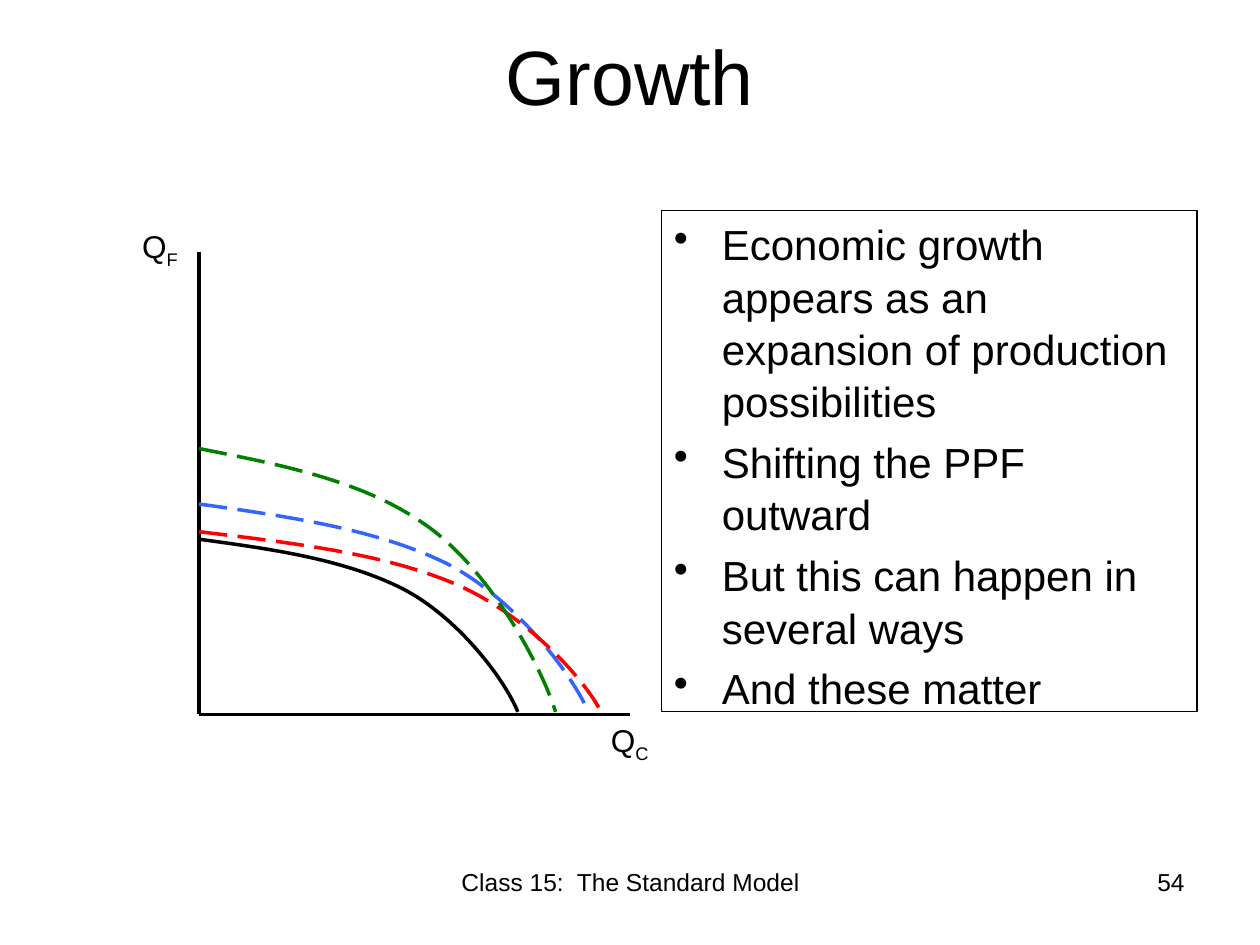
"""Build the Growth slide: a PPF diagram with shifted curves and a list of points."""
from pptx import Presentation, util as u
from pptx.dml.color import RGBColor
from pptx.enum import dml, shapes, text
from pptx.oxml import ns, xmlchemy as xml

HUES = {"ink": "000000", "blue": "3366FF", "red": "FF0000", "green": "008000"}
ALIGN = text.PP_ALIGN


def stroke(line, hue, width):
    line.color.rgb = RGBColor.from_string(HUES[hue])
    line.width = u.Pt(width)


def write(para, words, size, base=None):
    run = para.add_run()
    run.text = words
    run.font.size = u.Pt(size)
    run.font.name = "Arial"
    run.font.color.rgb = RGBColor.from_string(HUES["ink"])
    if base:
        run.font._element.set("baseline", base)


deck = Presentation()
deck.slide_width, deck.slide_height = u.Inches(10), u.Inches(7.5)
slide = deck.slides.add_slide(deck.slide_layouts[5])

title = slide.shapes.title
title.left, title.top = u.Inches(0.5), u.Inches(0.23)
title.width, title.height = u.Inches(9), u.Inches(1.25)
frame = title.text_frame
frame.vertical_anchor = text.MSO_ANCHOR.TOP
frame.margin_top = 0
frame.paragraphs[0].alignment = ALIGN.CENTER
write(frame.paragraphs[0], "Growth", 44)

left, base = 1.58, 5.67
for right, top in [(5, base), (left, 2)]:
    axis = slide.shapes.add_connector(
        shapes.MSO_CONNECTOR.STRAIGHT,
        u.Inches(left), u.Inches(base), u.Inches(right), u.Inches(top))
    stroke(axis.line, "ink", 2)
    axis._element.spPr.append(xml.OxmlElement("a:effectLst"))

curves = [
    ("ink", False, [(1.58, 4.28), (2.17, 4.36), (2.73, 4.44), (3.19, 4.67),
                    (3.64, 4.9), (4.01, 5.4), (4.11, 5.65)]),
    ("blue", True, [(1.58, 4), (2.29, 4.1), (2.99, 4.2), (3.54, 4.47),
                    (4.09, 4.75), (4.54, 5.35), (4.67, 5.65)]),
    ("red", True, [(1.58, 4.22), (2.32, 4.31), (3.03, 4.39), (3.6, 4.63),
                   (4.17, 4.87), (4.64, 5.39), (4.77, 5.65)]),
    ("green", True, [(1.58, 3.56), (2.23, 3.69), (2.87, 3.81), (3.37, 4.16),
                     (3.88, 4.51), (4.29, 5.27), (4.41, 5.65)]),
]
for hue, dashed, points in curves:
    start, *rest = [(u.Inches(x), u.Inches(y)) for x, y in points]
    pen = slide.shapes.build_freeform(*start)
    pen.add_line_segments(rest, close=False)
    curve = pen.convert_to_shape()
    curve.shadow.inherit = False
    curve.fill.background()
    stroke(curve.line, hue, 2)
    if dashed:
        curve.line.dash_style = dml.MSO_LINE.LONG_DASH
    route = next(curve._element.iter(ns.qn("a:path")))
    steps = route.findall(ns.qn("a:lnTo"))
    for first in (0, 3):
        bend = xml.OxmlElement("a:cubicBezTo")
        for step in steps[first:first + 3]:
            bend.append(step[0])
            route.remove(step)
        route.append(bend)

labels = [
    (4.75, 5.67, 0.75, 0.71, ALIGN.LEFT, [("Q", 18, None), ("C", 18, "-25000")]),
    (1.03, 1.75, 0.75, 0.71, ALIGN.LEFT, [("Q", 18, None), ("F", 18, "-25000")]),
    (3.42, 6.83, 3.17, 0.52, ALIGN.CENTER, [("Class 15:  The Standard Model", 14, None)]),
    (7.17, 6.83, 2.33, 0.52, ALIGN.RIGHT, [("54", 14, None)]),
]
for x, y, wide, high, align, runs in labels:
    label = slide.shapes.add_textbox(
        u.Inches(x), u.Inches(y), u.Inches(wide), u.Inches(high))
    label.text_frame.word_wrap = True
    para = label.text_frame.paragraphs[0]
    para.alignment = align
    for run in runs:
        write(para, *run)

panel = slide.shapes.add_shape(
    shapes.MSO_SHAPE.RECTANGLE,
    u.Inches(5.25), u.Inches(1.67), u.Inches(4.25), u.Inches(3.98))
panel.shadow.inherit = False
panel.fill.background()
stroke(panel.line, "ink", 0.75)
frame = panel.text_frame
frame.word_wrap = True
frame.vertical_anchor = text.MSO_ANCHOR.TOP
notes = [
    "Economic growth appears as an expansion of production possibilities",
    "Shifting the PPF outward",
    "But this can happen in several ways",
    "And these matter",
]
for spot, note in enumerate(notes):
    para = frame.add_paragraph() if spot else frame.paragraphs[0]
    para.alignment = ALIGN.LEFT
    para.space_before = u.Pt(4.8)
    para.line_spacing = 1.04
    props = para._p.get_or_add_pPr()
    props.set("marL", str(u.Inches(0.38)))
    props.set("indent", str(u.Inches(-0.38)))
    mark = xml.OxmlElement("a:buChar")
    mark.set("char", "•")
    props.append(mark)
    write(para, note, 24)

deck.save("out.pptx")
